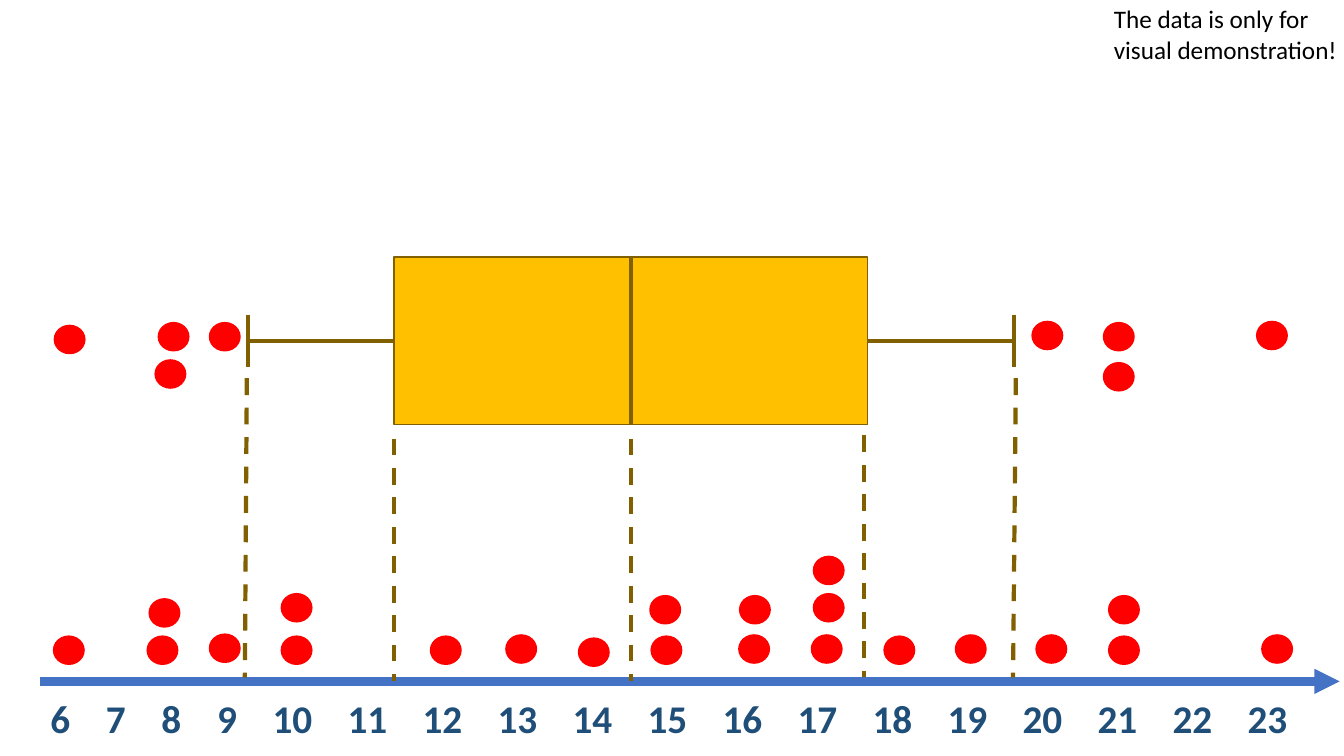
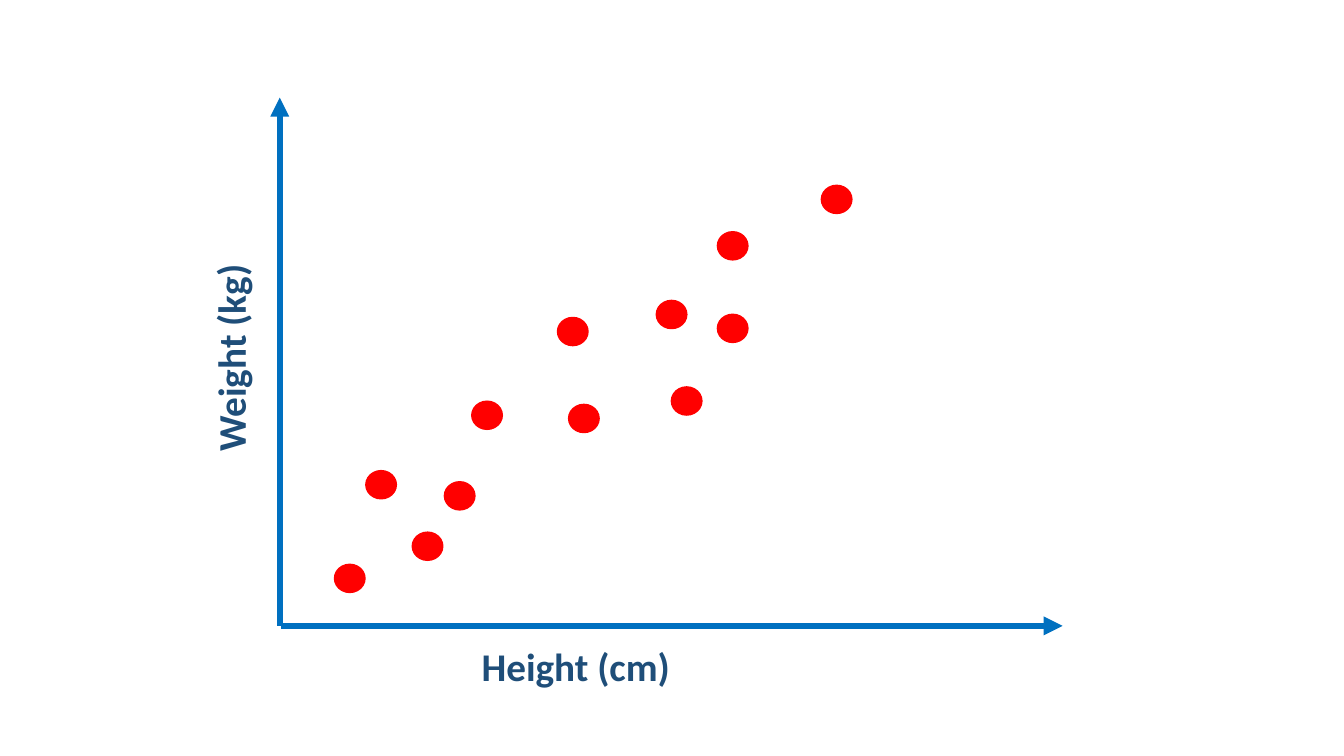
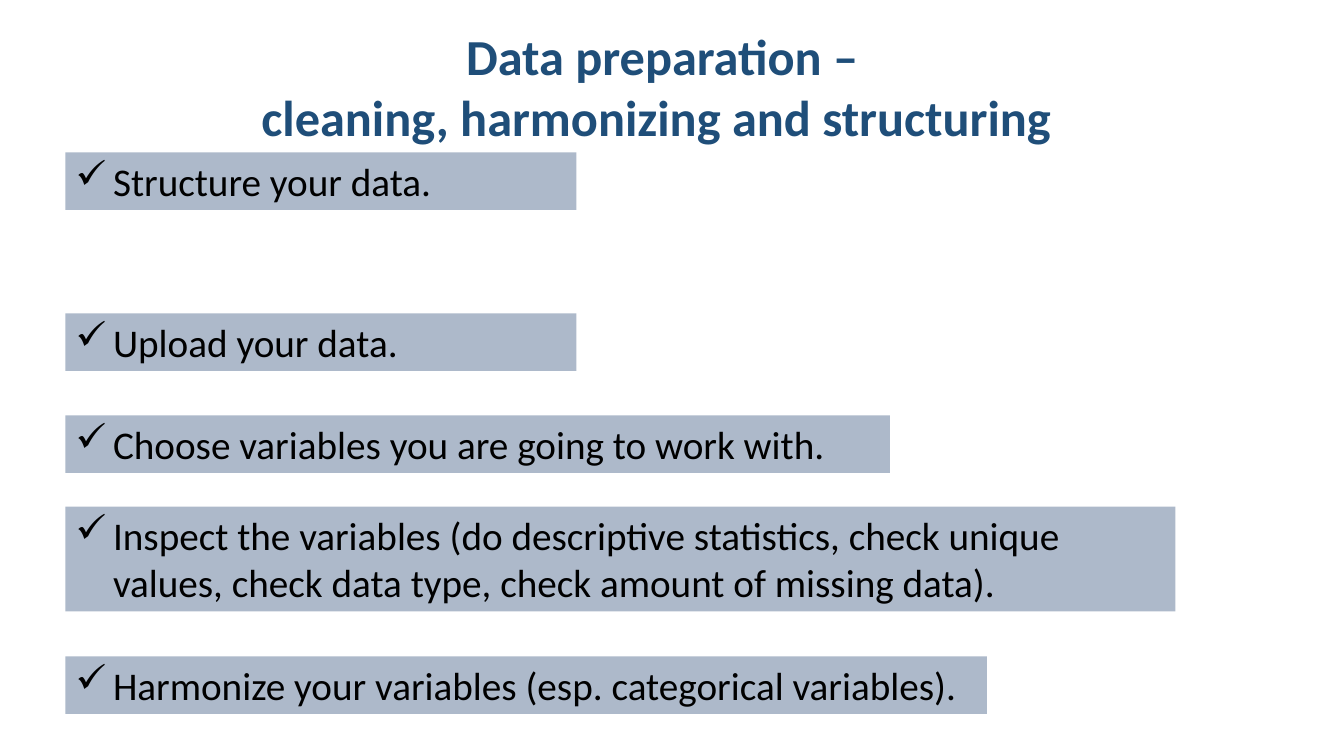
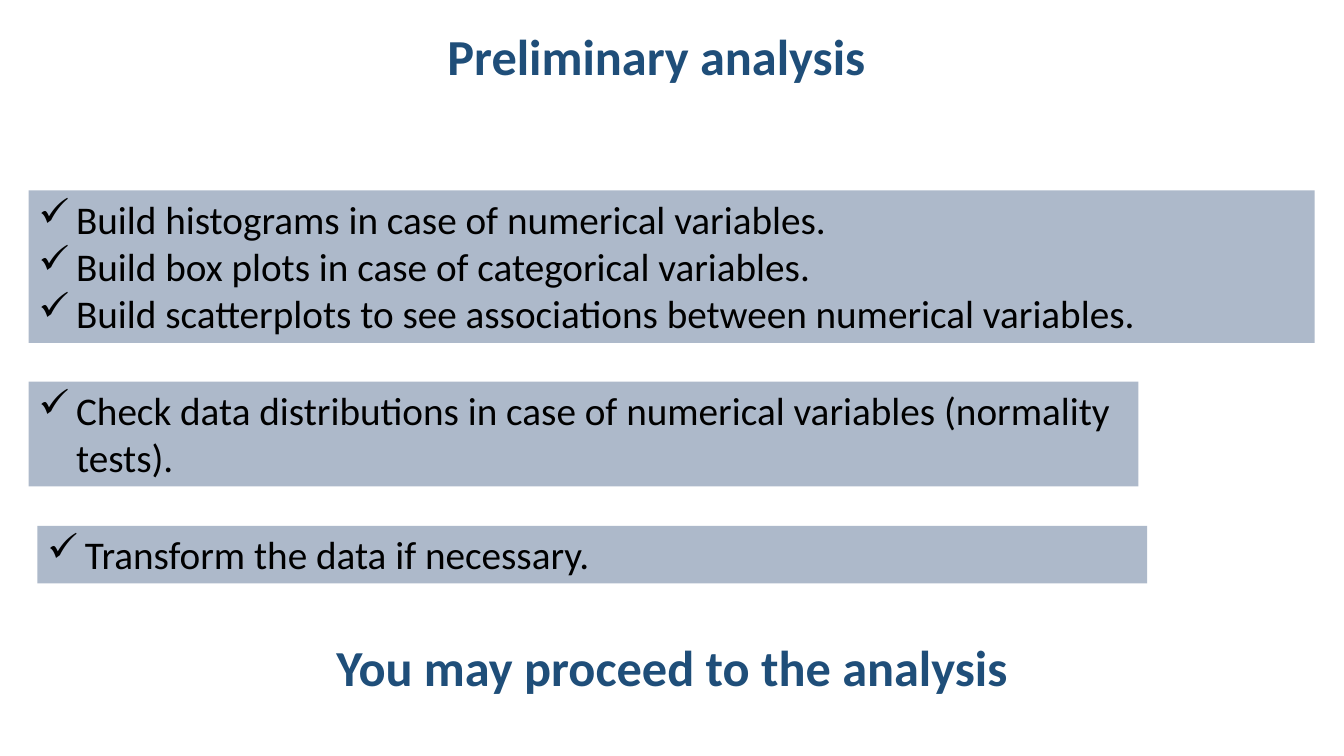
from dataclasses import dataclass
from typing import NamedTuple, Optional

from lxml import etree
from pptx import Presentation
from pptx.dml.color import RGBColor
from pptx.enum.dml import MSO_LINE
from pptx.enum.shapes import MSO_CONNECTOR, MSO_SHAPE
from pptx.enum.text import MSO_AUTO_SIZE, PP_ALIGN
from pptx.oxml.ns import qn
from pptx.util import Cm, Pt

ELLIPSE = MSO_SHAPE.OVAL
RECTANGLE = MSO_SHAPE.RECTANGLE
STRAIGHT = MSO_CONNECTOR.STRAIGHT
DASH = MSO_LINE.DASH
LEFT, CENTER = PP_ALIGN.LEFT, PP_ALIGN.CENTER
FIT_SHAPE = MSO_AUTO_SIZE.SHAPE_TO_FIT_TEXT
BLANK_LAYOUT = 6


@dataclass(frozen=True)
class Theme:
    font: str = "Calibri"
    bullet_font: str = "Wingdings"
    heading: RGBColor = RGBColor(0x1F, 0x4E, 0x79)
    text: RGBColor = RGBColor(0x00, 0x00, 0x00)
    card: RGBColor = RGBColor(0xAD, 0xB9, 0xCA)
    dot: RGBColor = RGBColor(0xFF, 0x00, 0x00)
    box: RGBColor = RGBColor(0xFF, 0xC0, 0x00)
    box_line: RGBColor = RGBColor(0x80, 0x60, 0x00)
    number_line: RGBColor = RGBColor(0x44, 0x72, 0xC4)
    plot_axis: RGBColor = RGBColor(0x00, 0x70, 0xC0)
    title_size: float = 36
    body_size: float = 28
    note_size: float = 18
    outline: float = 1
    box_stroke: float = 3
    plot_stroke: float = 4.5
    number_line_stroke: float = 6


THEME = Theme()


class Point(NamedTuple):
    """A place on the slide, in centimetres."""
    x: float
    y: float


class Area(NamedTuple):
    """A rectangle on the slide, in centimetres."""
    left: float
    top: float
    width: float
    height: float

    def lengths(self) -> tuple:
        return tuple(Cm(value) for value in self)


class TextStyle(NamedTuple):
    size: float
    color: RGBColor
    bold: bool = False
    alignment: PP_ALIGN = LEFT


class LineStyle(NamedTuple):
    color: RGBColor
    width: float
    dashed: bool = False
    arrow: bool = False


class Card(NamedTuple):
    area: Area
    items: list[str]


TITLE = TextStyle(THEME.title_size, THEME.heading, True, CENTER)
AXIS_LABEL = TextStyle(THEME.body_size, THEME.heading, True)
BODY = TextStyle(THEME.body_size, THEME.text)
NOTE = TextStyle(THEME.note_size, THEME.text)

WHISKER = LineStyle(THEME.box_line, THEME.box_stroke)
GUIDE = LineStyle(THEME.box_line, THEME.box_stroke, dashed=True)
NUMBER_LINE = LineStyle(THEME.number_line, THEME.number_line_stroke, arrow=True)
PLOT_AXIS = LineStyle(THEME.plot_axis, THEME.plot_stroke, arrow=True)

DOT_WIDTH, DOT_HEIGHT = 0.77, 0.71
CHECK_MARK = "ü"  # a check mark in the bullet font
BULLET_INDENT = 0.95
AXIS_LABEL_INDENT = 1.12
ONE_LINE, TWO_LINES, THREE_LINES = 1.45, 2.64, 3.84
TITLE_LEFT, TITLE_TOP, TITLE_WIDTH = 0.69, 0.51, 32
TITLE_ONE_LINE, TITLE_TWO_LINES = 1.8, 3.33

FIRST_VALUE, LAST_VALUE = 6, 23
ONE_DIGIT_COUNT = 4
ONE_DIGIT_STEP, TWO_DIGIT_STEP = 1.4, 1.89
VALUE_WIDTH = 1.8
NUMBER_LINE_LEFT, NUMBER_LINE_Y = 1.02, 17.17

VALUE_DOTS = [
    Point(1.35, 16.03), Point(3.71, 16.03), Point(3.76, 15.09),
    Point(5.28, 15.98), Point(7.09, 16.03), Point(7.09, 14.96),
    Point(10.85, 16.03), Point(12.75, 16), Point(14.58, 16.08),
    Point(16.41, 16.03), Point(16.38, 15.01), Point(18.62, 16),
    Point(18.64, 15.01), Point(20.45, 16), Point(20.5, 14.96),
    Point(20.5, 14.02), Point(22.28, 16.03), Point(24.08, 16),
    Point(26.11, 16), Point(27.94, 16.03), Point(27.94, 15.01),
    Point(31.8, 16),
]
OUTLIER_DOTS = [
    Point(1.37, 8.2), Point(3.99, 8.13), Point(3.91, 9.07),
    Point(5.28, 8.13), Point(26.01, 8.1), Point(27.81, 8.13),
    Point(27.81, 9.14), Point(31.67, 8.1),
]
SCATTER_DOTS = [
    Point(8.43, 14.22), Point(9.22, 11.86), Point(10.39, 13.41),
    Point(11.2, 12.14), Point(11.89, 10.11), Point(14.05, 8),
    Point(14.33, 10.19), Point(16.54, 7.57), Point(16.92, 9.75),
    Point(18.08, 7.92), Point(18.08, 5.84), Point(20.7, 4.67),
]
GUIDES = [
    (Point(6.22, 9.53), Point(6.17, 17.07)),
    (Point(9.93, 11.05), Point(9.93, NUMBER_LINE_Y)),
    (Point(15.9, 11.05), Point(15.9, NUMBER_LINE_Y)),
    (Point(21.77, 10.97), Point(21.77, 17.07)),
    (Point(25.6, 9.53), Point(25.53, 17.07)),
]

PREPARATION_CARDS = [
    Card(Area(1.65, 3.84, 12.88, ONE_LINE), ["Structure your data."]),
    Card(Area(1.65, 7.9, 12.88, ONE_LINE), ["Upload your data."]),
    Card(Area(1.65, 10.47, 20.78, ONE_LINE),
         ["Choose variables you are going to work with."]),
    Card(Area(1.65, 12.77, 27.97, TWO_LINES),
         ["Inspect the variables (do descriptive statistics, check unique "
          "values, check data type, check amount of missing data)."]),
    Card(Area(1.65, 16.54, 23.22, ONE_LINE),
         ["Harmonize your variables (esp. categorical variables)."]),
]
ANALYSIS_CARDS = [
    Card(Area(0.72, 4.8, 32.41, THREE_LINES),
         ["Build histograms in case of numerical variables.",
          "Build box plots in case of categorical variables.",
          "Build scatterplots to see associations between numerical variables."]),
    Card(Area(0.72, 9.62, 27.97, TWO_LINES),
         ["Check data distributions in case of numerical variables "
          "(normality tests)."]),
    Card(Area(0.94, 13.25, 27.97, ONE_LINE),
         ["Transform the data if necessary."]),
]


def add_text(slide, area: Area, lines: list[str], style: TextStyle):
    shape = slide.shapes.add_textbox(*area.lengths())
    frame = shape.text_frame
    frame.word_wrap = True
    frame.auto_size = FIT_SHAPE
    frame.text = "\n".join(lines)
    for paragraph in frame.paragraphs:
        paragraph.alignment = style.alignment
        for run in paragraph.runs:
            run.font.name = THEME.font
            run.font.size = Pt(style.size)
            run.font.bold = style.bold
            run.font.color.rgb = style.color
    return shape


def indent(paragraph, left: float, first_line: float = 0):
    """Set the indents in centimetres and return the paragraph properties."""
    properties = paragraph._p.get_or_add_pPr()
    properties.set("marL", str(Cm(left)))
    properties.set("indent", str(Cm(first_line)))
    return properties


def add_card(slide, card: Card) -> None:
    shape = add_text(slide, card.area, card.items, BODY)
    shape.fill.solid()
    shape.fill.fore_color.rgb = THEME.card
    for paragraph in shape.text_frame.paragraphs:
        properties = indent(paragraph, BULLET_INDENT, -BULLET_INDENT)
        etree.SubElement(properties, qn("a:buFont"), typeface=THEME.bullet_font,
                         pitchFamily="2", charset="2")
        etree.SubElement(properties, qn("a:buChar"), char=CHECK_MARK)


def add_title(slide, lines: list[str], height: float,
              left: float = TITLE_LEFT, top: float = TITLE_TOP) -> None:
    add_text(slide, Area(left, top, TITLE_WIDTH, height), lines, TITLE)


def add_axis_label(slide, area: Area, label: str, rotation: Optional[float] = None) -> None:
    shape = add_text(slide, area, [label], AXIS_LABEL)
    indent(shape.text_frame.paragraphs[0], AXIS_LABEL_INDENT)
    if rotation is not None:
        shape.rotation = rotation


def add_line(slide, start: Point, end: Point, style: LineStyle) -> None:
    connector = slide.shapes.add_connector(
        STRAIGHT, Cm(start.x), Cm(start.y), Cm(end.x), Cm(end.y))
    line = connector.line
    line.color.rgb = style.color
    line.width = Pt(style.width)
    if style.dashed:
        line.dash_style = DASH
    if style.arrow:
        etree.SubElement(line._get_or_add_ln(), qn("a:tailEnd"), type="triangle")
    etree.SubElement(connector._element.spPr, qn("a:effectLst"))


def add_filled_shape(slide, preset, area: Area, fill: RGBColor, outline: RGBColor) -> None:
    shape = slide.shapes.add_shape(preset, *area.lengths())
    shape.shadow.inherit = False
    shape.fill.solid()
    shape.fill.fore_color.rgb = fill
    shape.line.color.rgb = outline
    shape.line.width = Pt(THEME.outline)


def add_dots(slide, dots: list[Point]) -> None:
    for dot in dots:
        area = Area(dot.x, dot.y, DOT_WIDTH, DOT_HEIGHT)
        add_filled_shape(slide, ELLIPSE, area, THEME.dot, THEME.dot)


def add_number_line(slide) -> None:
    add_line(slide, Point(NUMBER_LINE_LEFT, NUMBER_LINE_Y),
             Point(33.76, NUMBER_LINE_Y), NUMBER_LINE)
    left = NUMBER_LINE_LEFT
    for index, value in enumerate(range(FIRST_VALUE, LAST_VALUE + 1)):
        add_text(slide, Area(left, 17.37, VALUE_WIDTH, ONE_LINE), [str(value)], AXIS_LABEL)
        left += ONE_DIGIT_STEP if index < ONE_DIGIT_COUNT else TWO_DIGIT_STEP


def add_box_plot(slide) -> None:
    box = Area(9.93, 6.48, 11.94, 4.22)
    right, bottom = box.left + box.width, box.top + box.height
    median, middle = box.left + box.width / 2, box.top + box.height / 2
    cap_half = 0.66
    add_filled_shape(slide, RECTANGLE, box, THEME.box, THEME.box_line)
    add_line(slide, Point(median, box.top), Point(median, bottom), WHISKER)
    for edge, end in ((box.left, 6.25), (right, 25.55)):
        add_line(slide, Point(min(edge, end), middle), Point(max(edge, end), middle), WHISKER)
        add_line(slide, Point(end, middle - cap_half), Point(end, middle + cap_half), WHISKER)


def build_box_plot_slide(slide) -> None:
    add_number_line(slide)
    add_dots(slide, VALUE_DOTS)
    add_text(slide, Area(27.82, -0.03, 6.4, 1.8),
             ["The data is only for visual demonstration!"], NOTE)
    for start, end in GUIDES:
        add_line(slide, start, end, GUIDE)
    add_box_plot(slide)
    add_dots(slide, OUTLIER_DOTS)


def build_scatter_slide(slide) -> None:
    add_line(slide, Point(7.05, 15.77), Point(7.05, 2.46), PLOT_AXIS)
    add_line(slide, Point(7.09, 15.77), Point(26.78, 15.77), PLOT_AXIS)
    add_dots(slide, SCATTER_DOTS)
    add_axis_label(slide, Area(1.77, 7.98, 8.08, ONE_LINE), "Weight (kg)", 270)
    add_axis_label(slide, Area(10.77, 16.05, 8.08, ONE_LINE), "Height (cm)")


def build_preparation_slide(slide) -> None:
    add_title(slide, ["Data preparation –", "cleaning, harmonizing and structuring "],
              TITLE_TWO_LINES)
    for card in PREPARATION_CARDS:
        add_card(slide, card)


def build_analysis_slide(slide) -> None:
    add_title(slide, ["Preliminary analysis "], TITLE_ONE_LINE)
    for card in ANALYSIS_CARDS:
        add_card(slide, card)
    add_title(slide, ["You may proceed to the analysis"], TITLE_ONE_LINE, 0.94, 15.9)


def main() -> None:
    presentation = Presentation()
    presentation.slide_width = Cm(33.87)
    presentation.slide_height = Cm(19.05)
    layout = presentation.slide_layouts[BLANK_LAYOUT]
    for build in (build_box_plot_slide, build_scatter_slide,
                  build_preparation_slide, build_analysis_slide):
        build(presentation.slides.add_slide(layout))
    presentation.save("out.pptx")


if __name__ == "__main__":
    main()
